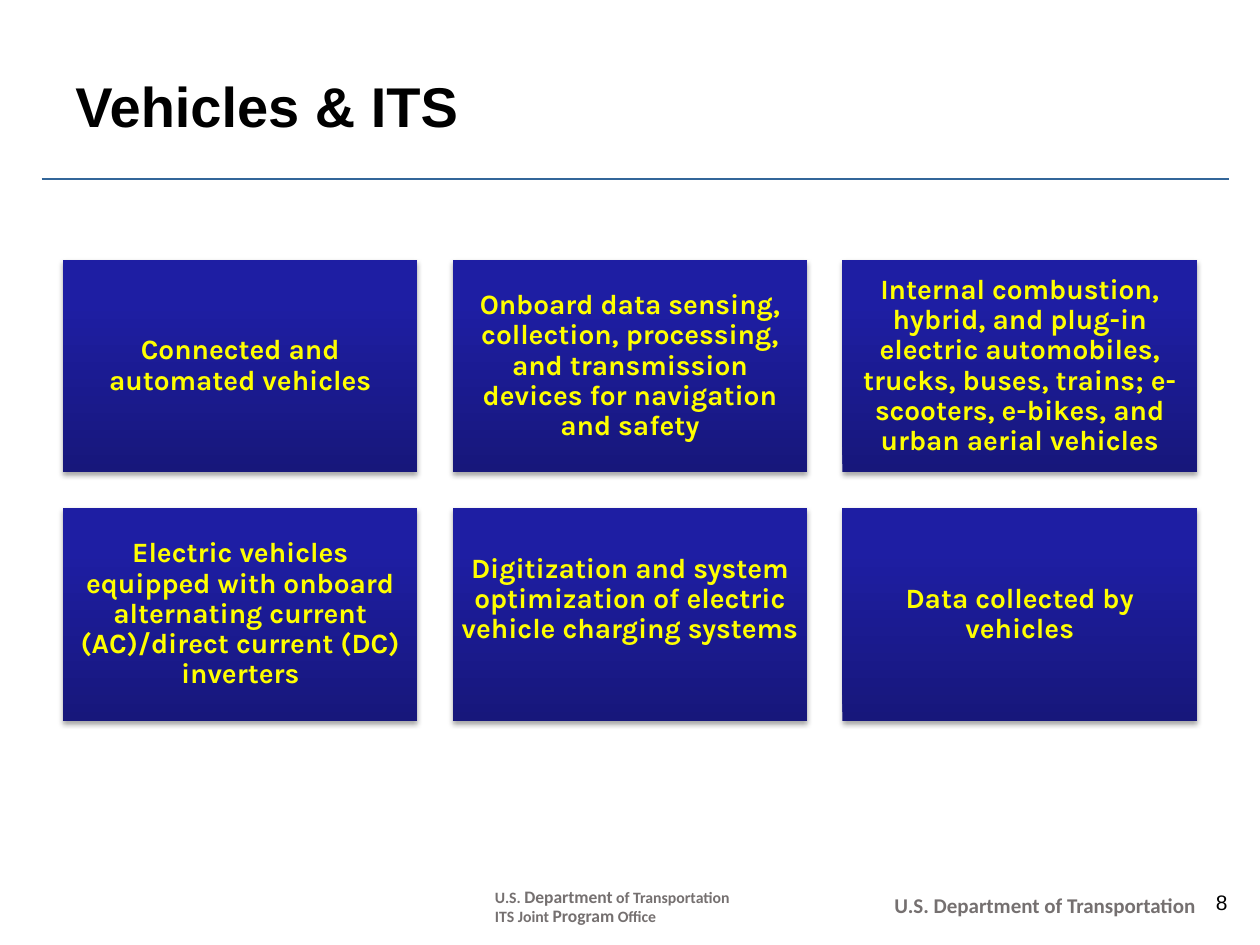
import copy
from dataclasses import dataclass

import pptx
import pptx.dml.color
import pptx.enum.shapes
import pptx.enum.text
import pptx.oxml
import pptx.oxml.ns
import pptx.util
from pptx.util import Inches

ALIGN = pptx.enum.text.PP_ALIGN
ANCHOR = pptx.enum.text.MSO_ANCHOR
NSDECL = pptx.oxml.ns.nsdecls("a")


@dataclass(frozen=True)
class Theme:
    title_font: str = "Arial"
    card_font: str = "Karla"
    footer_font: str = "Calibri"
    black: str = "000000"
    grey: str = "757070"
    yellow: str = "FFFF00"
    rule: str = "336699"
    card_stops: tuple = ((0, "17177B"), (0.8, "1E1EA3"), (1, "1C1CA5"))
    title_size: int = 32
    card_size: int = 16
    footer_size: int = 12
    office_size: int = 9
    office_large: int = 10


THEME = Theme()

CARDS = [
    "Connected and automated vehicles",
    "Onboard data sensing, collection, processing, and transmission devices "
    "for navigation and safety",
    "Internal combustion, hybrid, and plug-in electric automobiles, trucks, "
    "buses, trains; e-scooters, e-bikes, and urban aerial vehicles",
    "Electric vehicles equipped with onboard alternating current (AC)/direct "
    "current (DC) inverters",
    "Digitization and system optimization of electric vehicle charging systems",
    "Data collected by vehicles",
]
RAISED_CARD = 4  # its text sits above the middle

OFFICE_LINES = [
    [("U.S. ", False), ("Department", True), (" of Transportation", False)],
    [("ITS Joint ", False), ("Program", True), (" Office", False)],
]


def rgb(value):
    return pptx.dml.color.RGBColor.from_string(value)


def style_run(r, font, size, color, bold=False):
    r.font.name = font
    r.font.size = pptx.util.Pt(size)
    r.font.color.rgb = rgb(color)
    r.font.bold = bold


def add_text(s, box, text, font, size, color, bold=False):
    tf = s.shapes.add_textbox(*map(Inches, box)).text_frame
    tf.word_wrap = True
    p = tf.paragraphs[0]
    p.text = text
    for r in p.runs:
        style_run(r, font, size, color, bold)
    return tf


def add_header(s, box):
    # Title and the rule under it
    tf = add_text(s, box, "Vehicles & ITS", THEME.title_font,
                  THEME.title_size, THEME.black, True)
    tf.vertical_anchor = ANCHOR.MIDDLE
    left, top, width, height = box
    y = top + height + 0.17
    line = s.shapes.add_connector(
        pptx.enum.shapes.MSO_CONNECTOR.STRAIGHT,
        Inches(left - 0.17), Inches(y), Inches(left + width + 0.25), Inches(y))
    line.line.color.rgb = rgb(THEME.rule)
    line.line.width = pptx.util.Pt(1.5)
    line._element.spPr.append(pptx.oxml.parse_xml(f"<a:effectLst {NSDECL}/>"))


def fill_card(sp):
    # Three-stop gradient, dark at the bottom
    sp.fill.gradient()
    sp.fill.gradient_angle = 90
    stops = sp.fill._xPr.find(pptx.oxml.ns.qn("a:gradFill")).gsLst
    stops.append(copy.deepcopy(stops[-1]))
    for stop, (position, color) in zip(sp.fill.gradient_stops, THEME.card_stops):
        stop.position = position
        stop.color.rgb = rgb(color)
    sp.line.fill.background()
    # Soft shadow straight below
    sp._element.spPr.append(pptx.oxml.parse_xml(
        f'<a:effectLst {NSDECL}><a:outerShdw blurRad="39400" dist="22900" '
        'dir="5400000" rotWithShape="0"><a:srgbClr val="000000">'
        '<a:alpha val="35000"/></a:srgbClr></a:outerShdw></a:effectLst>'))


def add_card(s, box, text, raised=False):
    sp = s.shapes.add_shape(pptx.enum.shapes.MSO_SHAPE.RECTANGLE,
                            *map(Inches, box))
    fill_card(sp)
    tf = sp.text_frame
    tf.word_wrap = True
    tf.vertical_anchor = ANCHOR.MIDDLE
    tf.margin_left = tf.margin_right = tf.margin_top = Inches(0.07)
    tf.margin_bottom = Inches(0.31 if raised else 0.07)
    p = tf.paragraphs[0]
    p.text = text
    p.alignment = ALIGN.CENTER
    p.line_spacing = 0.9
    style_run(p.runs[0], THEME.card_font, THEME.card_size, THEME.yellow, True)


def add_card_grid(s, box, columns=3, gap=0.28):
    left, top, width, height = box
    rows = len(CARDS) // columns
    w = (width - gap * (columns - 1)) / columns
    h = (height - gap * (rows - 1)) / rows
    for i, text in enumerate(CARDS):
        row, column = divmod(i, columns)
        cell = (left + column * (w + gap), top + row * (h + gap), w, h)
        add_card(s, cell, text, i == RAISED_CARD)


def add_footer(s, box):
    left, top, width, height = box
    # Office name, with larger words inside each line
    tf = add_text(s, (left, top, 2.07, height), "", THEME.footer_font,
                  THEME.office_size, THEME.grey)
    for i, parts in enumerate(OFFICE_LINES):
        p = tf.add_paragraph() if i else tf.paragraphs[0]
        p.line_spacing = 0.9
        for text, large in parts:
            r = p.add_run()
            r.text = text
            size = THEME.office_large if large else THEME.office_size
            style_run(r, THEME.footer_font, size, THEME.grey, True)
    # Department name
    tf = add_text(s, (left + 3.17, top + 0.08, 2.75, 0.24),
                  "U.S. Department of Transportation", THEME.footer_font,
                  THEME.footer_size, THEME.grey, True)
    tf.paragraphs[0].line_spacing = 0.75
    # Page number
    tf = add_text(s, (left + width - 0.42, top + 0.01, 0.42, 0.3), "8",
                  THEME.title_font, THEME.footer_size, THEME.black)
    tf.paragraphs[0].alignment = ALIGN.RIGHT


def main():
    prs = pptx.Presentation()
    prs.slide_width, prs.slide_height = Inches(10), Inches(7.5)
    s = prs.slides.add_slide(prs.slide_layouts[6])
    add_header(s, (0.5, 0.42, 9, 0.83))
    add_card_grid(s, (0.5, 2.06, 9, 3.66))
    add_footer(s, (3.83, 7, 6.01, 0.36))
    prs.save("out.pptx")


if __name__ == "__main__":
    main()
